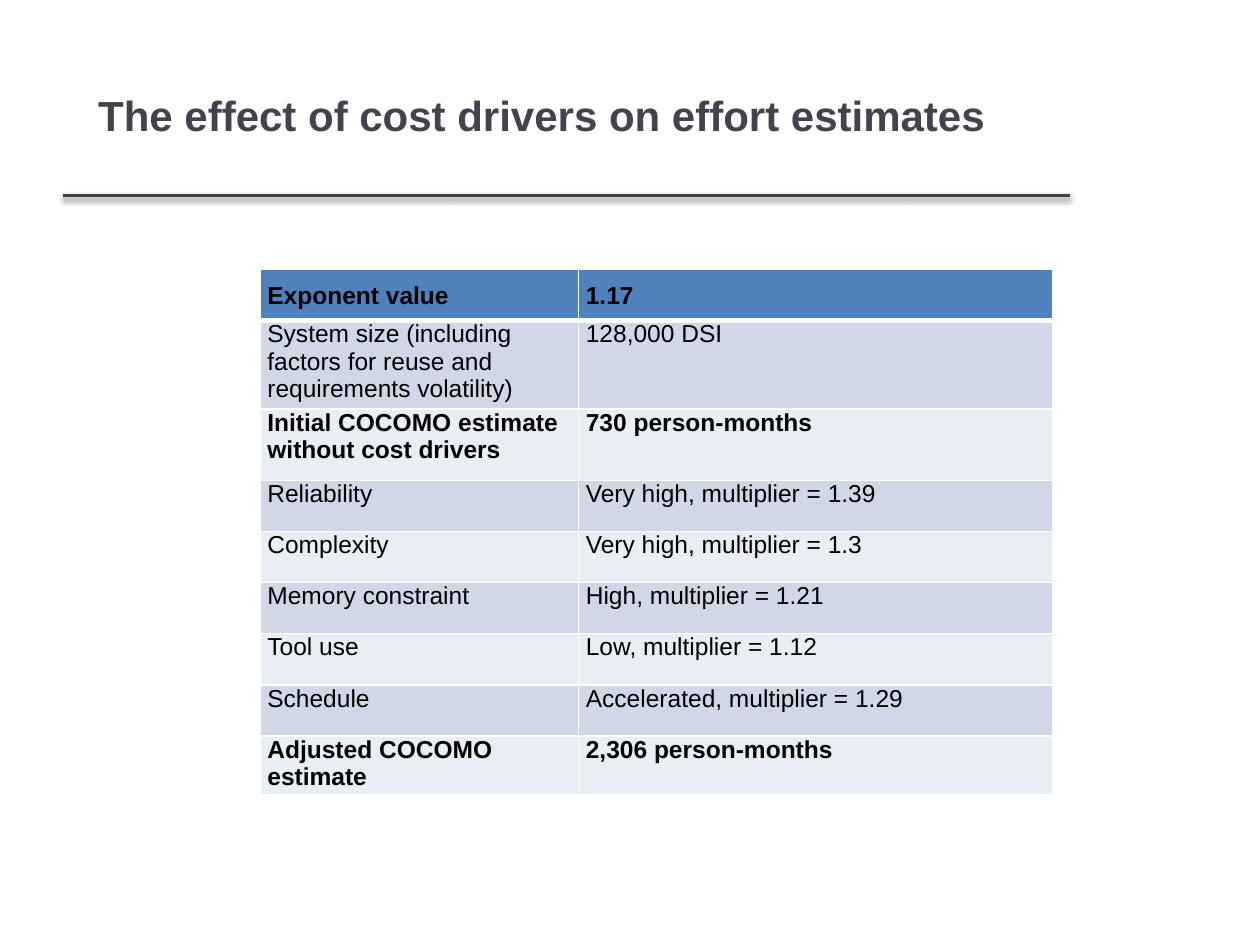
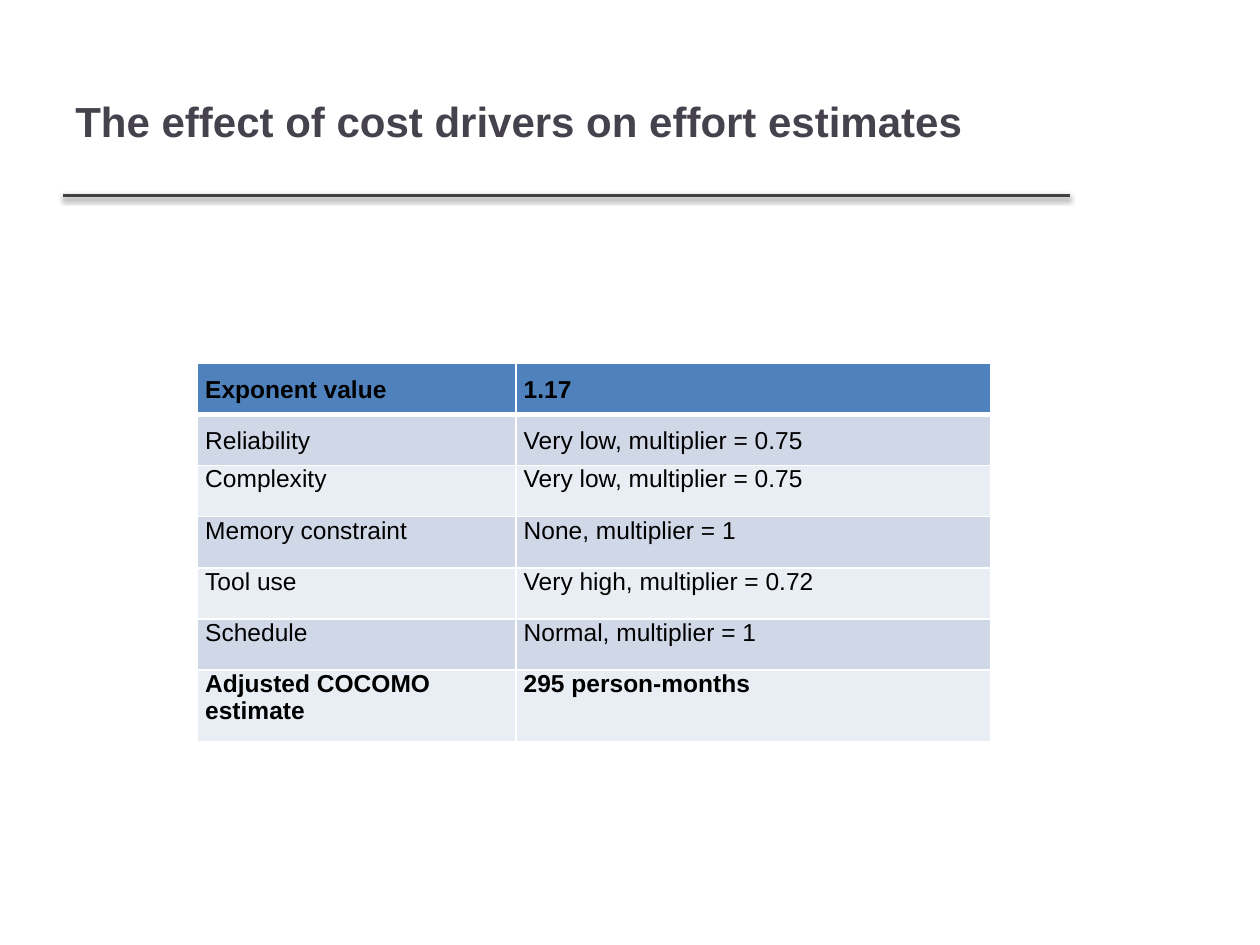
from lxml.etree import SubElement
from pptx import Presentation
from pptx.dml.color import RGBColor
from pptx.enum.shapes import MSO_CONNECTOR
from pptx.enum.text import MSO_ANCHOR, PP_ALIGN
from pptx.oxml.ns import qn
from pptx.util import Pt

TITLE_COLOR = RGBColor(0x46, 0x42, 0x4D)
RULE_COLOR = RGBColor(0x40, 0x40, 0x40)
BLACK = RGBColor(0, 0, 0)
WHITE = RGBColor(0xFF, 0xFF, 0xFF)
HEADER_FILL = RGBColor(0x4F, 0x81, 0xBD)
BAND_FILLS = (RGBColor(0xE9, 0xED, 0xF4), RGBColor(0xD0, 0xD8, 0xE8))

FONT = "Arial"
TITLE = "The effect of cost drivers on effort estimates"
COLUMN_WIDTHS = (182, 271)
ROW_HEIGHT = 29.2
CELL_PADDING = 4.3
EXTRA_PADDING = 7.2

RAISED_ESTIMATE = [
    ("Exponent value", "1.17"),
    ("System size (including factors for reuse and requirements volatility)", "128,000 DSI"),
    ("Initial COCOMO estimate without cost drivers", "730 person-months"),
    ("Reliability", "Very high, multiplier = 1.39"),
    ("Complexity", "Very high, multiplier = 1.3"),
    ("Memory constraint", "High, multiplier = 1.21"),
    ("Tool use", "Low, multiplier = 1.12"),
    ("Schedule", "Accelerated, multiplier = 1.29"),
    ("Adjusted COCOMO estimate", "2,306 person-months"),
]
LOWERED_ESTIMATE = [
    ("Exponent value", "1.17"),
    ("Reliability", "Very low, multiplier = 0.75"),
    ("Complexity", "Very low, multiplier = 0.75"),
    ("Memory constraint", "None, multiplier = 1"),
    ("Tool use", "Very high, multiplier = 0.72"),
    ("Schedule", "Normal, multiplier = 1"),
    ("Adjusted COCOMO estimate", "295 person-months"),
]


def add_run(paragraph, text, size, color, bold):
    run = paragraph.add_run()
    run.text = text
    run.font.name = FONT
    run.font.size = Pt(size)
    run.font.bold = bold
    run.font.color.rgb = color


def add_rule(slide, left, top, width):
    rule = slide.shapes.add_connector(
        MSO_CONNECTOR.STRAIGHT, Pt(left), Pt(top), Pt(left + width), Pt(top))
    rule.line.color.rgb = RULE_COLOR
    rule.line.width = Pt(2)
    effects = SubElement(rule._element.spPr, qn("a:effectLst"))
    shadow = SubElement(effects, qn("a:outerShdw"), blurRad=str(Pt(3.1)),
                        dist=str(Pt(1.6)), dir="5400000", rotWithShape="0")
    color = SubElement(shadow, qn("a:srgbClr"), val=str(BLACK))
    SubElement(color, qn("a:alpha"), val="38000")


def add_title(slide, left, top, width, height):
    box = slide.shapes.add_textbox(Pt(left), Pt(top), Pt(width), Pt(height))
    frame = box.text_frame
    frame.word_wrap = True
    frame.vertical_anchor = MSO_ANCHOR.MIDDLE
    add_run(frame.paragraphs[0], TITLE, 24, TITLE_COLOR, True)


def set_borders(cell, top, bottom):
    properties = cell._tc.get_or_add_tcPr()
    for side, width in (("L", 1), ("R", 1), ("T", top), ("B", bottom)):
        line = SubElement(properties, qn(f"a:ln{side}"), w=str(Pt(width)))
        fill = SubElement(line, qn("a:solidFill"))
        SubElement(fill, qn("a:srgbClr"), val=str(WHITE))


def add_driver_table(slide, left, top, rows, padded_above, padded_below):
    frame = slide.shapes.add_table(
        len(rows), len(COLUMN_WIDTHS), Pt(left), Pt(top),
        Pt(sum(COLUMN_WIDTHS)), Pt(ROW_HEIGHT * len(rows)))
    table = frame.table
    for column, width in zip(table.columns, COLUMN_WIDTHS):
        column.width = Pt(width)
    for index, texts in enumerate(rows):
        table.rows[index].height = Pt(ROW_HEIGHT)
        bold = index == 0 or "COCOMO" in texts[0]
        for position, text in enumerate(texts):
            cell = table.cell(index, position)
            set_borders(cell, 3 if index == 1 else 1, 3 if index == 0 else 1)
            cell.fill.solid()
            cell.fill.fore_color.rgb = BAND_FILLS[index % 2] if index else HEADER_FILL
            cell.margin_left = cell.margin_right = Pt(CELL_PADDING)
            cell.margin_top = Pt(EXTRA_PADDING if index in padded_above else 0)
            cell.margin_bottom = Pt(EXTRA_PADDING if index in padded_below else 0)
            paragraph = cell.text_frame.paragraphs[0]
            paragraph.alignment = PP_ALIGN.JUSTIFY if position else PP_ALIGN.LEFT
            paragraph.space_after = Pt(3)
            add_run(paragraph, text, 14, BLACK, bold)


def add_estimate_slide(presentation, title_box, table_corner, rows, padded_above, padded_below):
    slide = presentation.slides.add_slide(presentation.slide_layouts[6])
    add_rule(slide, 36, 111.6, 575.3)
    add_title(slide, *title_box)
    add_driver_table(slide, *table_corner, rows, padded_above, padded_below)


def main():
    presentation = Presentation()
    presentation.slide_width = Pt(720)
    presentation.slide_height = Pt(540)
    add_estimate_slide(presentation, (49, 24.5, 552, 82), (148.5, 154),
                       RAISED_ESTIMATE, {0}, {2})
    add_estimate_slide(presentation, (36, 24.5, 573, 88.5), (113, 207.7),
                       LOWERED_ESTIMATE, {0, 1}, {6})
    presentation.save("out.pptx")


if __name__ == "__main__":
    main()
